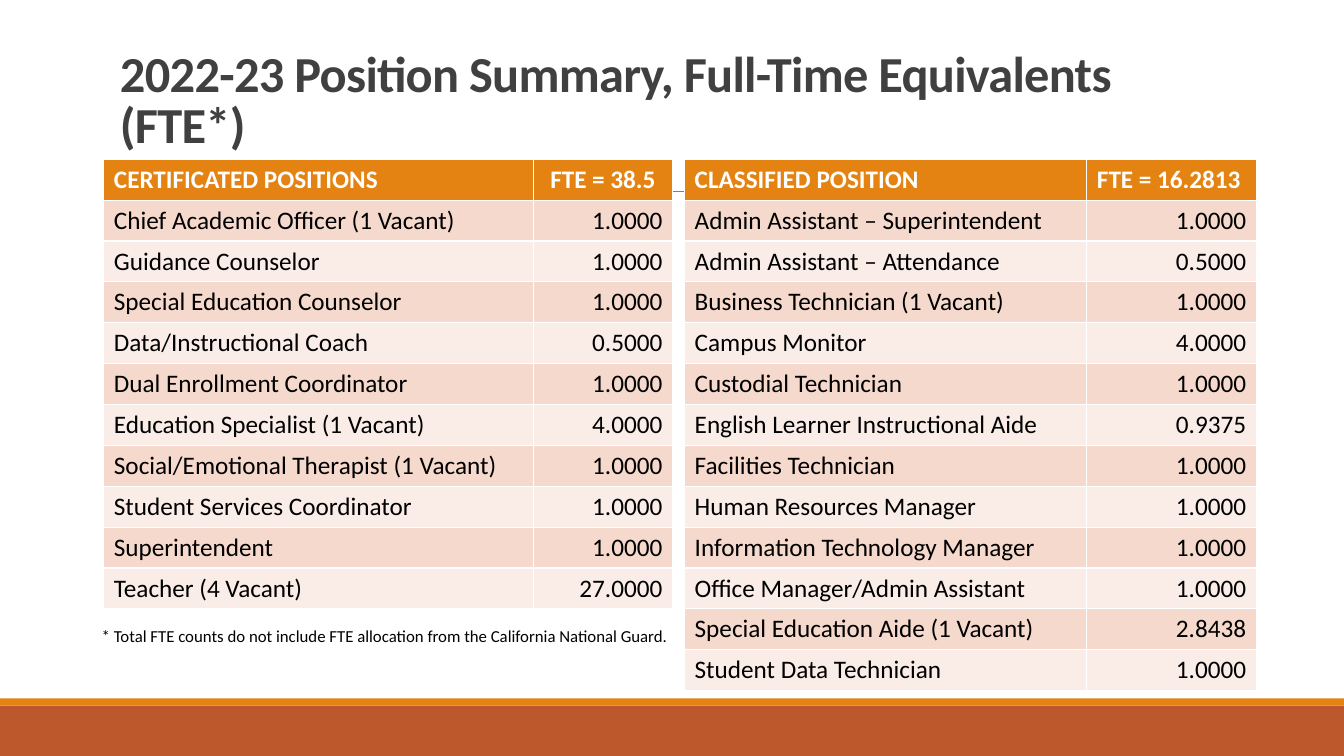
from pptx import Presentation
from pptx.dml.color import RGBColor
from pptx.enum.shapes import MSO_CONNECTOR, MSO_SHAPE
from pptx.enum.text import MSO_ANCHOR, MSO_AUTO_SIZE, PP_ALIGN as ALIGN
from pptx.oxml.ns import qn
from pptx.util import Inches, Pt
from lxml import etree

ORANGE = "E48312"
ROW_FILLS = ["FAEDE7", "F5D9CC"]
ROW_HEIGHT = 0.4055


def color(value):
    return RGBColor.from_string(value)


def write(frame, text, size=18, fill="000000", bold=False, align=ALIGN.LEFT):
    paragraph = frame.paragraphs[0]
    paragraph.alignment = align
    run = paragraph.add_run()
    run.text = text
    run.font.name = "Calibri"
    run.font.size = Pt(size)
    run.font.bold = bold
    run.font.color.rgb = color(fill)
    return paragraph


presentation = Presentation()
presentation.slide_width = Inches(13.33)
presentation.slide_height = Inches(7.5)
slide = presentation.slides.add_slide(presentation.slide_layouts[5])

# Bottom bands
for top, height, fill in [(7, 0.5, "BD582C"), (6.93, 0.07, ORANGE)]:
    band = slide.shapes.add_shape(
        MSO_SHAPE.RECTANGLE, 0, Inches(top), Inches(13.33), Inches(height))
    band.shadow.inherit = False
    band.fill.solid()
    band.fill.fore_color.rgb = color(fill)
    band.line.fill.background()

# Rule behind the tables
rule = slide.shapes.add_connector(
    MSO_CONNECTOR.STRAIGHT, Inches(1.31), Inches(1.9), Inches(12.21), Inches(1.9))
rule.line.color.rgb = color("808080")
rule.line.width = Pt(0.5)
etree.SubElement(rule.element.spPr, qn("a:effectLst"))

# Title
title = slide.shapes.title
title.left, title.top = Inches(1.09), Inches(0.31)
title.width, title.height = Inches(11.33), Inches(1.27)
title.text_frame.word_wrap = True
title.text_frame.auto_size = MSO_AUTO_SIZE.NONE
title.text_frame.vertical_anchor = MSO_ANCHOR.BOTTOM
heading = write(title.text_frame, "2022-23 Position Summary, Full-Time Equivalents (FTE*)",
                size=36, fill="404040", bold=True)
heading.line_spacing = 0.85
heading.runs[0].font._element.set("spc", "-50")

# Position tables: left edge, column widths, alignment of the total, rows
certificated = [
    ("CERTIFICATED POSITIONS", "FTE = 38.5"),
    ("Chief Academic Officer (1 Vacant)", "1.0000"),
    ("Guidance Counselor", "1.0000"),
    ("Special Education Counselor", "1.0000"),
    ("Data/Instructional Coach", "0.5000"),
    ("Dual Enrollment Coordinator", "1.0000"),
    ("Education Specialist (1 Vacant)", "4.0000"),
    ("Social/Emotional Therapist (1 Vacant)", "1.0000"),
    ("Student Services Coordinator", "1.0000"),
    ("Superintendent", "1.0000"),
    ("Teacher (4 Vacant)", "27.0000"),
]
classified = [
    ("CLASSIFIED POSITION", "FTE = 16.2813"),
    ("Admin Assistant – Superintendent", "1.0000"),
    ("Admin Assistant – Attendance", "0.5000"),
    ("Business Technician (1 Vacant)", "1.0000"),
    ("Campus Monitor", "4.0000"),
    ("Custodial Technician", "1.0000"),
    ("English Learner Instructional Aide", "0.9375"),
    ("Facilities Technician", "1.0000"),
    ("Human Resources Manager", "1.0000"),
    ("Information Technology Manager", "1.0000"),
    ("Office Manager/Admin Assistant", "1.0000"),
    ("Special Education Aide (1 Vacant)", "2.8438"),
    ("Student Data Technician", "1.0000"),
]
tables = [
    (1.03, (4.26, 1.38), ALIGN.CENTER, certificated),
    (6.79, (3.99, 1.68), ALIGN.LEFT, classified),
]
for left, widths, total_align, rows in tables:
    table = slide.shapes.add_table(
        len(rows), 2, Inches(left), Inches(1.58),
        Inches(sum(widths)), Inches(ROW_HEIGHT * len(rows))).table
    for column, width in zip(table.columns, widths):
        column.width = Inches(width)
    for row_index, row in enumerate(rows):
        header = row_index == 0
        aligns = (ALIGN.LEFT, total_align if header else ALIGN.RIGHT)
        for column_index, text in enumerate(row):
            cell = table.cell(row_index, column_index)
            cell.fill.solid()
            cell.fill.fore_color.rgb = color(ORANGE if header else ROW_FILLS[row_index % 2])
            write(cell.text_frame, text, fill="FFFFFF" if header else "000000",
                  bold=header, align=aligns[column_index])

# Footnote
footnote = slide.shapes.add_textbox(Inches(0.91), Inches(6.16), Inches(5.88), Inches(0.3))
footnote.text_frame.word_wrap = False
footnote.text_frame.auto_size = MSO_AUTO_SIZE.SHAPE_TO_FIT_TEXT
write(footnote.text_frame,
      "* Total FTE counts do not include FTE allocation from the California National Guard.",
      size=12)

presentation.save("out.pptx")
